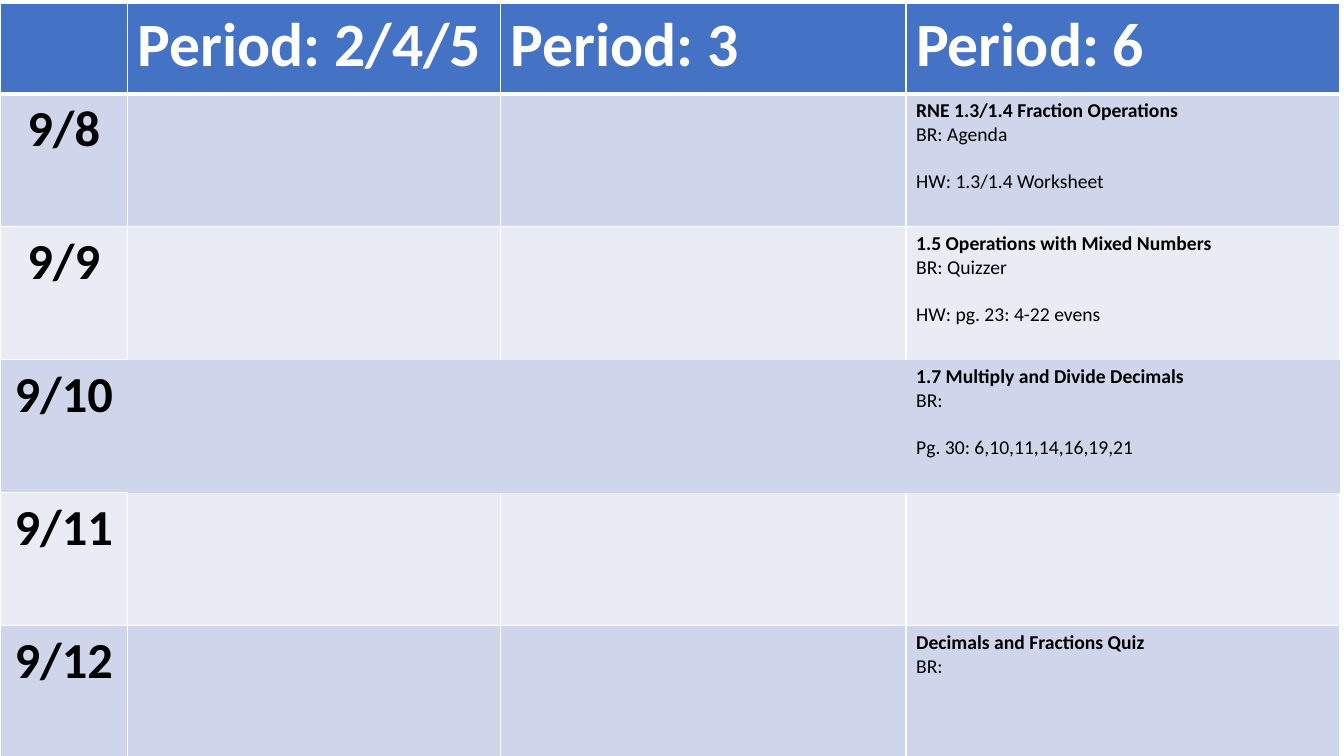
import pptx
import pptx.dml.color
import pptx.enum.text
import pptx.oxml
import pptx.oxml.ns
import pptx.util

RGB = pptx.dml.color.RGBColor
ALIGN = pptx.enum.text.PP_ALIGN
BLUE = RGB(0x44, 0x72, 0xC4)
DARK = RGB(0xCF, 0xD5, 0xEA)
LIGHT = RGB(0xE9, 0xEB, 0xF5)
WHITE = RGB(0xFF, 0xFF, 0xFF)
BLACK = RGB(0, 0, 0)

# Shares of the slide, in percent
COLS = [9.5, 27.76, 30.16, 32.26]
ROWS = [12] + [17.6] * 5
TOP = 0.4
OPEN = 3  # row drawn without rules beyond its date

HEADS = ["", "Period: 2/4/5", "Period: 3", "Period: 6"]
# Date, then topic, bell ringer and homework for period 6
DAYS = [
    ("9/8", ["RNE 1.3/1.4 Fraction Operations", "BR: Agenda",
             "HW: 1.3/1.4 Worksheet"]),
    ("9/9", ["1.5 Operations with Mixed Numbers", "BR: Quizzer",
             "HW: pg. 23: 4-22 evens"]),
    ("9/10", ["1.7 Multiply and Divide Decimals", "BR:",
              "Pg. 30: 6,10,11,14,16,19,21"]),
    ("9/11", []),
    ("9/12", ["Decimals and Fractions Quiz", "BR:"]),
]


def write(para, text, size=14, bold=False, color=BLACK, font="Calibri",
          align=ALIGN.LEFT, before=0):
    para.alignment = align
    para.space_before = pptx.util.Pt(before)
    run = para.add_run()
    run.text = text
    run.font.size = pptx.util.Pt(size)
    run.font.bold = bold
    run.font.name = font
    run.font.color.rgb = color


def edges(row, col):
    """Rule widths in points for the left, right, top and bottom sides."""
    rule = dict(L=1, R=1, T=1, B=1)
    if row == 0:
        rule["B"] = 3
    if row == 1:
        rule["T"] = 3
    if row == OPEN:
        if col:
            rule = dict.fromkeys(rule, 0)
        else:
            rule["R"] = 0
    if col and row == OPEN - 1:
        rule["B"] = 0
    if col and row == OPEN + 1:
        rule["T"] = 0
    return rule


class Deck:
    def __init__(self):
        self.show = pptx.Presentation()
        self.show.slide_width = pptx.util.Inches(13.33)
        self.show.slide_height = pptx.util.Inches(7.5)
        self.slide = self.show.slides.add_slide(self.show.slide_layouts[6])

    def wide(self, share):
        return int(self.show.slide_width * share / 100)

    def high(self, share):
        return int(self.show.slide_height * share / 100)

    def table(self, cols, rows, top):
        frame = self.slide.shapes.add_table(
            len(rows), len(cols), 0, self.high(top),
            self.wide(sum(cols)), self.high(sum(rows)))
        grid = frame.table
        for col, share in zip(grid.columns, cols):
            col.width = self.wide(share)
        for row, share in zip(grid.rows, rows):
            row.height = self.high(share)
        return grid

    def cell(self, cell, fill, rule):
        cell.fill.solid()
        cell.fill.fore_color.rgb = fill
        props = cell._tc.get_or_add_tcPr()
        space = pptx.oxml.ns.nsdecls("a")
        for spot, (side, width) in enumerate(rule.items()):
            paint = "<a:noFill/>"
            if width:
                paint = f'<a:solidFill><a:srgbClr val="{WHITE}"/></a:solidFill>'
            props.insert(spot, pptx.oxml.parse_xml(
                f'<a:ln{side} {space} w="{pptx.util.Pt(width)}">{paint}</a:ln{side}>'))


def main():
    deck = Deck()
    grid = deck.table(COLS, ROWS, TOP)

    # Fills and rules
    for row in range(len(ROWS)):
        fill = BLUE if row == 0 else DARK if row % 2 else LIGHT
        for col in range(len(COLS)):
            deck.cell(grid.cell(row, col), fill, edges(row, col))

    # Header
    for col, head in enumerate(HEADS):
        if head:
            write(grid.cell(0, col).text_frame.paragraphs[0], head,
                  size=44, bold=True, color=WHITE)

    # Dates and lessons
    for row, (date, plan) in enumerate(DAYS, 1):
        write(grid.cell(row, 0).text_frame.paragraphs[0], date,
              size=36, bold=True, align=ALIGN.CENTER)
        frame = grid.cell(row, 3).text_frame
        for line, text in enumerate(plan):
            para = frame.add_paragraph() if line else frame.paragraphs[0]
            write(para, text, bold=line == 0, before=17 if line == 2 else 0)

    deck.show.save("out.pptx")


if __name__ == "__main__":
    main()
